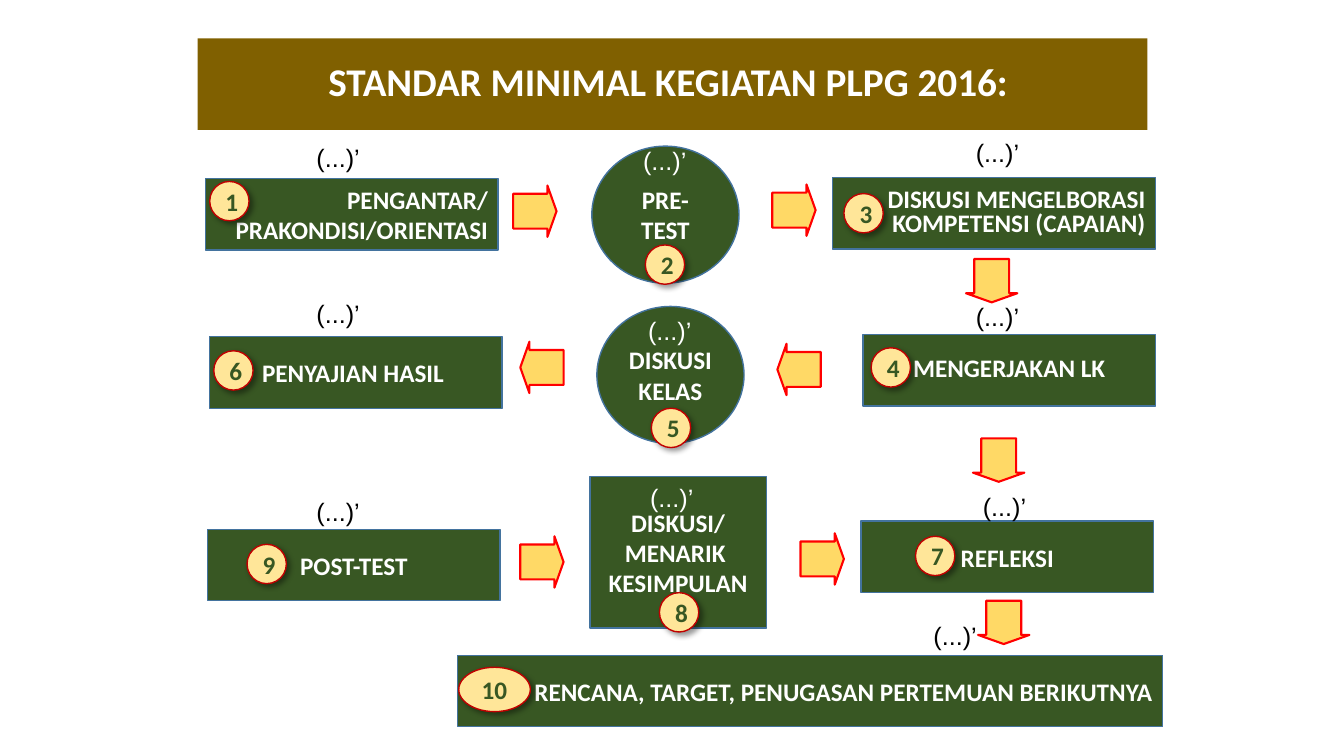
from lxml import etree
from pptx import Presentation
from pptx import util as u
from pptx.dml.color import RGBColor
from pptx.enum import shapes, text
from pptx.oxml import ns

BROWN = RGBColor(0x80, 0x60, 0x00)
GREEN = RGBColor(0x38, 0x57, 0x23)
BLUE = RGBColor(0x43, 0x73, 0x9E)
GOLD = RGBColor(0xFF, 0xD9, 0x66)
CREAM = RGBColor(0xFF, 0xE6, 0x99)
RED = RGBColor(0xFF, 0x00, 0x00)
DARK_RED = RGBColor(0xC0, 0x00, 0x00)
WHITE = RGBColor(0xFF, 0xFF, 0xFF)
BLACK = RGBColor(0x00, 0x00, 0x00)

RECT = shapes.MSO_SHAPE.RECTANGLE
OVAL = shapes.MSO_SHAPE.OVAL
ARROW = shapes.MSO_SHAPE.RIGHT_ARROW
LEFT, CENTER, RIGHT = text.PP_ALIGN.LEFT, text.PP_ALIGN.CENTER, text.PP_ALIGN.RIGHT

# Content
TITLE = "STANDAR MINIMAL KEGIATAN PLPG 2016: "
DURATION = "(...)’"
BOX = (2.9, 0.71)
CIRCLE = (1.46, 1.36)
BADGE = (0.39, 0.39)
ARROW_SIZE = (0.43, 0.51)
DURATION_SIZE = (0.64, 0.4)

# Number, wording, outline, position, size, alignment, line spacing
STEPS = [
    (1, "PENGANTAR/ PRAKONDISI/ORIENTASI", RECT, (2.04, 1.77), BOX, RIGHT, 1),
    (2, "PRE-\nTEST", OVAL, (5.87, 1.45), CIRCLE, CENTER, 1),
    (3, "DISKUSI MENGELBORASI KOMPETENSI (CAPAIAN)", RECT, (8.26, 1.76), (3.2, 0.71), RIGHT, 0.8),
    (4, "MENGERJAKAN LK", RECT, (8.56, 3.32), BOX, CENTER, 0.8),
    (5, "DISKUSI KELAS", OVAL, (5.92, 3.04), CIRCLE, CENTER, 1),
    (6, "PENYAJIAN HASIL ", RECT, (2.08, 3.34), BOX, CENTER, 1),
    (7, "REFLEKSI", RECT, (8.54, 5.17), BOX, CENTER, 1),
    (8, "DISKUSI/ MENARIK \nKESIMPULAN", RECT, (5.85, 4.73), (1.75, 1.5), CENTER, 1),
    (9, "POST-TEST", RECT, (2.06, 5.25), BOX, CENTER, 1),
    (10, "RENCANA, TARGET, PENUGASAN PERTEMUAN BERIKUTNYA", RECT, (4.54, 6.5), (6.99, 0.71), RIGHT, 1),
]

# Step number: badge position, duration position, duration colour
MARKS = {
    1: ((2.08, 1.8), (3.04, 1.36), BLACK),
    2: ((6.4, 2.43), (6.28, 1.39), WHITE),
    3: ((8.37, 1.92), (9.58, 1.31), BLACK),
    4: ((8.64, 3.45), (9.58, 2.94), BLACK),
    5: ((6.46, 4.05), (6.33, 3.08), WHITE),
    6: ((2.12, 3.48), (3.04, 2.91), BLACK),
    7: ((9.08, 5.32), (9.65, 4.83), BLACK),
    8: ((6.54, 5.88), (6.35, 4.74), WHITE),
    9: ((2.45, 5.4), (3.04, 4.87), BLACK),
    10: ((4.55, 6.62), (9.16, 6.1), BLACK),
}

# Rotation: arrow positions
ARROWS = {
    0: [(5.09, 1.84), (7.66, 1.83), (5.16, 5.32), (7.94, 5.29)],
    90: [(9.62, 2.53), (9.69, 4.31), (9.74, 5.92)],
    180: [(7.71, 3.41), (5.16, 3.39)],
}


def inches(position, size):
    return [u.Inches(value) for value in position + size]


def write(shape, wording, color, align=CENTER, spacing=1, size=18, font="Calibri", bold=True):
    frame = shape.text_frame
    frame.text = wording
    frame.vertical_anchor = text.MSO_ANCHOR.MIDDLE
    for paragraph in frame.paragraphs:
        paragraph.alignment = align
        paragraph.line_spacing = spacing
        paragraph.font.name = font
        paragraph.font.size = u.Pt(size)
        paragraph.font.bold = bold
        paragraph.font.color.rgb = color


def add_outline(kind, position, size, fill, line, width=1):
    shape = slide.shapes.add_shape(kind, *inches(position, size))
    shape.shadow.inherit = False
    shape.fill.solid()
    shape.fill.fore_color.rgb = fill
    shape.line.color.rgb = line
    shape.line.width = u.Pt(width)
    return shape


def add_shadow(shape):
    effects = shape.element.spPr.find(ns.qn("a:effectLst"))
    shadow = etree.SubElement(effects, ns.qn("a:outerShdw"), blurRad=str(u.Pt(4)),
                              dist=str(u.Pt(3)), dir=str(45 * 60000), algn="tl", rotWithShape="0")
    color = etree.SubElement(shadow, ns.qn("a:srgbClr"), val=str(BLACK))
    etree.SubElement(color, ns.qn("a:alpha"), val="40000")


presentation = Presentation()
presentation.slide_width = u.Inches(13.33)
presentation.slide_height = u.Inches(7.5)
slide = presentation.slides.add_slide(presentation.slide_layouts[5])

# Title bar
title = slide.shapes.title
title.left, title.top, title.width, title.height = inches((1.96, 0.38), (9.42, 0.91))
title.fill.solid()
title.fill.fore_color.rgb = BROWN
write(title, TITLE, WHITE, spacing=0.9, size=28)

# Steps
for number, wording, kind, position, size, align, spacing in STEPS:
    step = add_outline(kind, position, size, GREEN, BLUE)
    write(step, wording, WHITE, align, spacing)

# Arrows
for rotation, positions in ARROWS.items():
    for position in positions:
        arrow = add_outline(ARROW, position, ARROW_SIZE, GOLD, RED, 1.5)
        arrow.adjustments[0] = 0.68
        arrow.adjustments[1] = 0.21
        arrow.rotation = rotation

# Numbered badges and durations
for number, (badge_position, duration_position, color) in MARKS.items():
    size = (0.71, 0.44) if number == 10 else BADGE
    badge = add_outline(OVAL, badge_position, size, CREAM, DARK_RED)
    add_shadow(badge)
    write(badge, str(number), GREEN, LEFT if number == 1 else CENTER)

    duration = slide.shapes.add_textbox(*inches(duration_position, DURATION_SIZE))
    duration.text_frame.word_wrap = False
    write(duration, DURATION, color, LEFT, font="Arial", bold=False)
    duration.text_frame.vertical_anchor = text.MSO_ANCHOR.TOP

presentation.save("out.pptx")
